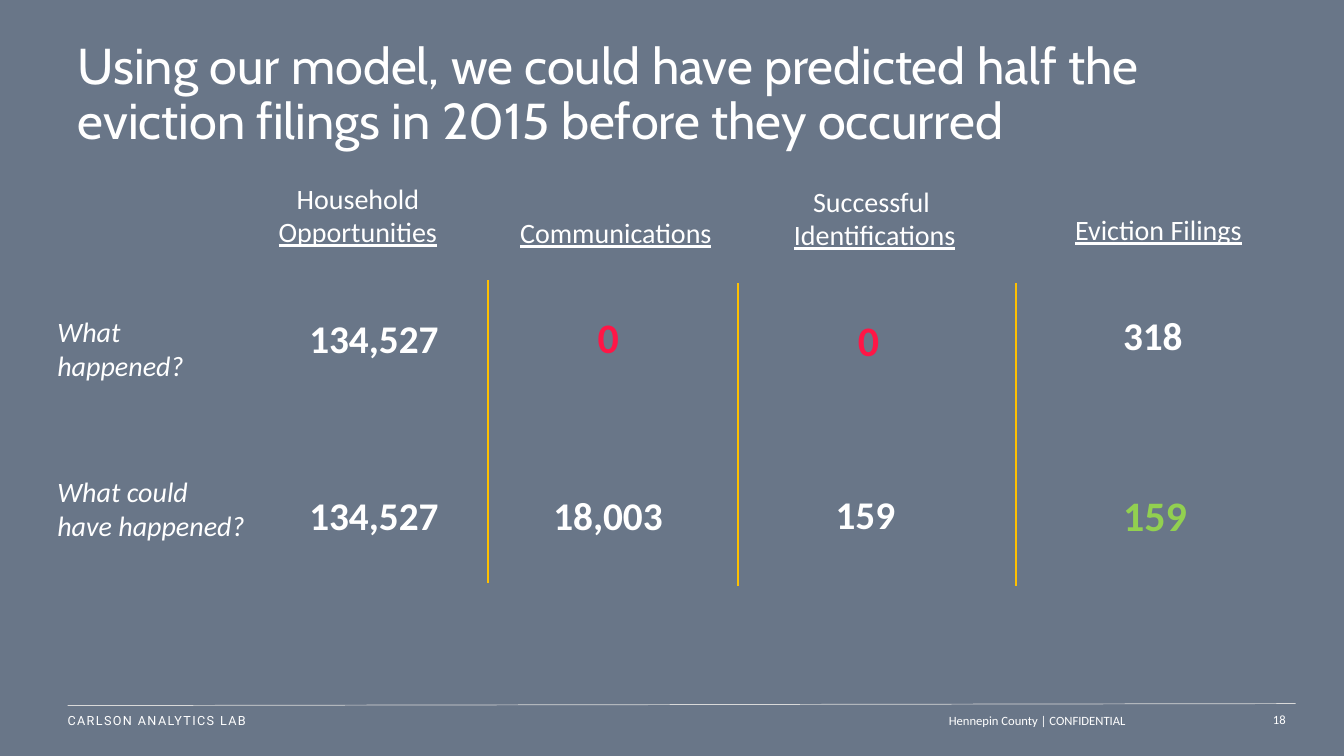
import pptx
import pptx.dml.color
import pptx.enum.shapes
import pptx.enum.text
import pptx.util
from lxml import etree

Inches = pptx.util.Inches
Anchor = pptx.enum.text.MSO_ANCHOR
Align = pptx.enum.text.PP_ALIGN
AutoSize = pptx.enum.text.MSO_AUTO_SIZE

WHITE, RED, GREEN, GOLD = "FFFFFF", "FF1646", "92D050", "FFC000"
SLATE, RULE_GREY = "697688", "D9D9D9"

TITLE = ("Using our model, we could have predicted half the "
         "eviction filings in 2015 before they occurred")
TITLE_BOX = (0.67, 0.4, 11.2, 1.1)

# Each heading: box, wraps, alignment, paragraphs of (text, underlined) spans
HEADINGS = [
    ((2.57, 1.75, 1.96, 0.77), True, Align.CENTER,
     [[("Household ", False), ("Opportunities", True)]]),
    ((5.06, 2.09, 2.12, 0.44), False, Align.LEFT, [[("Communications", True)]]),
    ((7.15, 1.78, 3.05, 0.77), True, Align.CENTER,
     [[("Successful ", False)], [("Identifications", True)]]),
    ((10.51, 2.06, 1.96, 0.44), True, Align.CENTER, [[("Eviction Filings", True)]]),
]

# Each row label: box, wraps, lines
ROW_LABELS = [
    ((0.47, 3.07, 1.49, 0.77), False, ["What", "happened?"]),
    ((0.47, 4.66, 2.46, 0.77), True, ["What could", "have happened?"]),
]

# Each figure: text, left, top, width, colour
FIGURES = [
    ("134,527", 2.97, 3.07, 1.5, WHITE),
    ("0", 5.83, 3.04, 0.42, RED),
    ("0", 8.41, 3.07, 0.42, RED),
    ("318", 11.04, 3.04, 0.8, WHITE),
    ("134,527", 2.97, 4.83, 1.5, WHITE),
    ("18,003", 5.39, 4.83, 1.3, WHITE),
    ("159", 8.19, 4.82, 0.8, WHITE),
    ("159", 11.04, 4.81, 0.84, GREEN),
]

DIVIDER_HEIGHT = 3
DIVIDERS = [(4.84, 2.78), (7.32, 2.81), (10.08, 2.81)]
FOOTER_RULE = (0.67, 7, 12.85, 6.98)

# Each footer: text, box, left inset, alignment, font, letter spacing
FOOTERS = [
    ("CARLSON ANALYTICS LAB", (0.67, 6.98, 3.24, 0.33), 0, Align.LEFT, "Roboto", 1),
    ("Hennepin County | CONFIDENTIAL", (5.32, 6.99, 5.94, 0.32), 0.1,
     Align.RIGHT, "Calibri", 0),
    ("18", (12.4, 6.98, 0.45, 0.32), 0, Align.RIGHT, "Calibri", 0),
]


def rgb(value):
    return pptx.dml.color.RGBColor.from_string(value)


def add_span(para, text, size, color=WHITE, **formats):
    span = para.add_run()
    span.text = text
    settings = {"name": "Calibri", "size": pptx.util.Pt(size), **formats}
    for name, value in settings.items():
        setattr(span.font, name, value)
    span.font.color.rgb = rgb(color)
    return span


def add_box(page, box, wrap, anchor=Anchor.TOP):
    frame = page.shapes.add_textbox(*map(Inches, box)).text_frame
    frame.word_wrap = wrap
    frame.vertical_anchor = anchor
    return frame


def add_paragraph(frame, index, align):
    para = frame.add_paragraph() if index else frame.paragraphs[0]
    para.alignment = align
    return para


def add_line(page, ends, color, width):
    line = page.shapes.add_connector(
        pptx.enum.shapes.MSO_CONNECTOR.STRAIGHT, *map(Inches, ends))
    line.line.color.rgb = rgb(color)
    line.line.width = pptx.util.Pt(width)
    properties = line._element.spPr
    etree.SubElement(properties, pptx.oxml.ns.qn("a:effectLst"))


def add_title(page):
    title = page.shapes.title
    for name, value in zip(("left", "top", "width", "height"), TITLE_BOX):
        setattr(title, name, Inches(value))
    frame = title.text_frame
    frame.auto_size = AutoSize.NONE
    frame.word_wrap = True
    frame.vertical_anchor = Anchor.MIDDLE
    para = add_paragraph(frame, 0, Align.LEFT)
    para.line_spacing = 0.9
    add_span(para, TITLE, 36, name="Cabin")


def add_comparison(page):
    for box, wrap, align, paragraphs in HEADINGS:
        frame = add_box(page, box, wrap)
        frame.auto_size = AutoSize.SHAPE_TO_FIT_TEXT
        for index, spans in enumerate(paragraphs):
            para = add_paragraph(frame, index, align)
            for text, underlined in spans:
                add_span(para, text, 20, underline=underlined)

    for box, wrap, lines in ROW_LABELS:
        frame = add_box(page, box, wrap)
        frame.auto_size = AutoSize.SHAPE_TO_FIT_TEXT
        for index, text in enumerate(lines):
            add_span(add_paragraph(frame, index, Align.LEFT), text, 20, italic=True)

    for text, left, top, width, color in FIGURES:
        size, height = (28, 0.57) if color == WHITE else (30, 0.61)
        frame = add_box(page, (left, top, width, height), False)
        frame.auto_size = AutoSize.SHAPE_TO_FIT_TEXT
        add_span(add_paragraph(frame, 0, Align.LEFT), text, size, color, bold=True)

    for left, top in DIVIDERS:
        add_line(page, (left, top, left, top + DIVIDER_HEIGHT), GOLD, 1.5)


def add_footer(page):
    add_line(page, FOOTER_RULE, RULE_GREY, 0.5)
    for text, box, inset, align, font, spacing in FOOTERS:
        frame = add_box(page, box, True, Anchor.MIDDLE)
        frame.margin_left = Inches(inset)
        span = add_span(add_paragraph(frame, 0, align), text, 9, name=font)
        if spacing:
            span.font._element.set("spc", str(spacing * 100))


def main():
    deck = pptx.Presentation()
    deck.slide_width, deck.slide_height = Inches(13.33), Inches(7.5)
    page = deck.slides.add_slide(deck.slide_layouts[5])
    page.background.fill.solid()
    page.background.fill.fore_color.rgb = rgb(SLATE)
    add_title(page)
    add_comparison(page)
    add_footer(page)
    deck.save("out.pptx")


if __name__ == "__main__":
    main()
